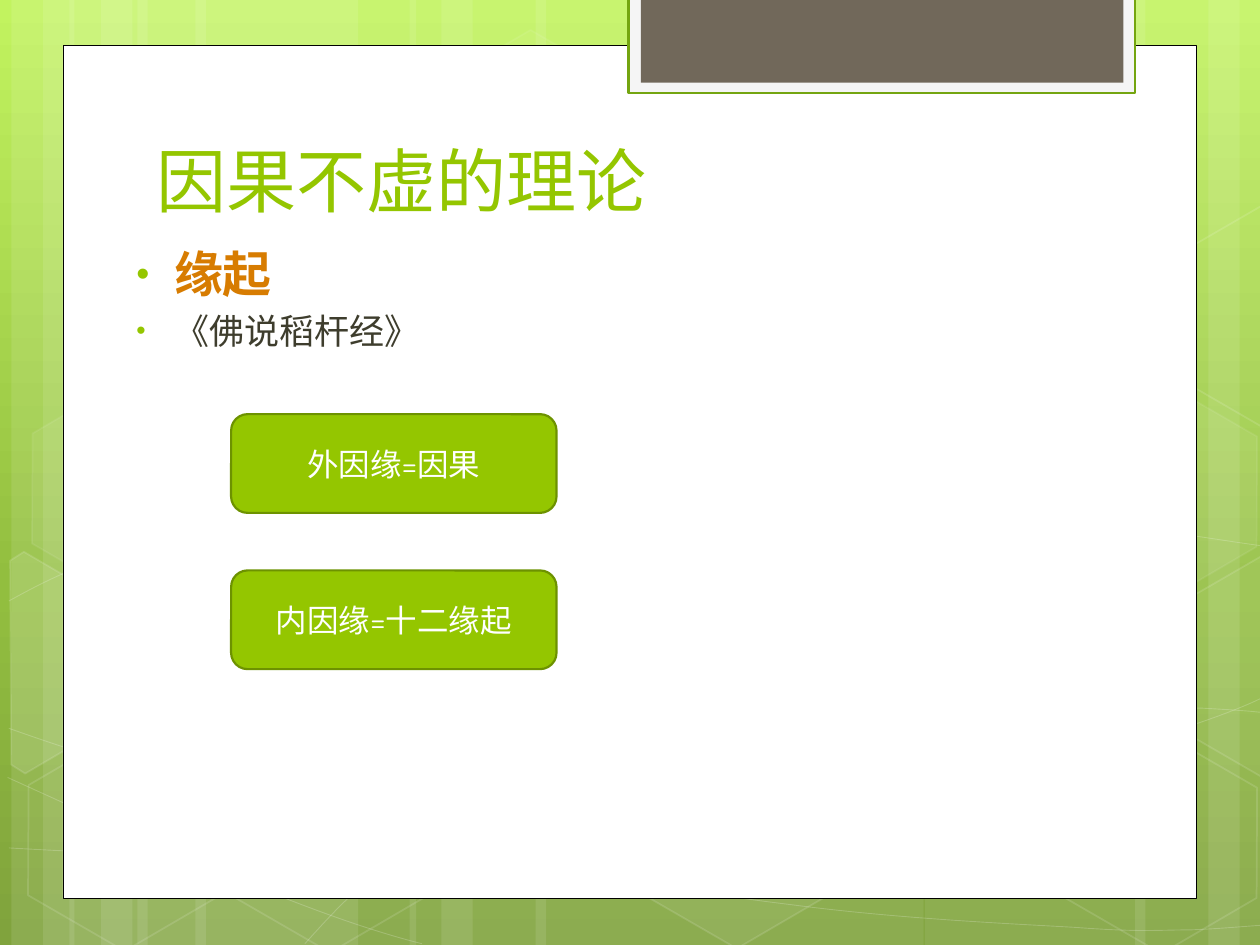
"""Build the slide on the theory of cause and effect."""
from copy import deepcopy

from lxml.etree import SubElement
from pptx import Presentation
from pptx.dml.color import RGBColor
from pptx.enum.shapes import MSO_SHAPE
from pptx.enum.text import MSO_ANCHOR, MSO_AUTO_SIZE, PP_ALIGN
from pptx.oxml.ns import qn
from pptx.util import Cm, Pt

COLORS = {
    "sky": "C2F35F", "meadow": "92BE3F", "moss": "80A33D",
    "white": "FFFFFF", "black": "000000", "lime": "94C600",
    "lime_edge": "6D9200", "tab": "F5F5F5", "tab_edge": "74A510",
    "tab_core": "71685A", "orange": "D77C01", "ink": "3E3D2D",
}


def paint(shape, fill=None, edge=None, width=1, fill_alpha=100, edge_alpha=100):
    """Set fill and line of a shape, with opacity in percent."""
    shape.shadow.inherit = False
    for part, color, alpha in (
        (shape.fill, fill, fill_alpha),
        (shape.line.fill, edge, edge_alpha),
    ):
        if color is None or alpha == 0:
            part.background()
            continue
        part.solid()
        part.fore_color.rgb = RGBColor.from_string(COLORS[color])
        if alpha < 100:
            holder = shape.element.spPr
            if part is not shape.fill:
                holder = holder.find(qn("a:ln"))
            value = holder.find(qn("a:solidFill")).find(qn("a:srgbClr"))
            SubElement(value, qn("a:alpha")).set("val", str(alpha * 1000))
    if edge:
        shape.line.width = Pt(width)


def style(paragraph, font_name, size, color, bold=False):
    """Format every run of a paragraph."""
    for run in paragraph.runs:
        run.font.name = font_name
        run.font.size = Pt(size)
        run.font.bold = bold
        run.font.color.rgb = RGBColor.from_string(COLORS[color])


prs = Presentation()
prs.slide_width, prs.slide_height = Cm(25.4), Cm(19.05)
slide = prs.slides.add_slide(prs.slide_layouts[5])
shapes = slide.shapes

backdrop = slide.background.fill
backdrop.gradient()
backdrop.gradient_angle = 270
stop_list = next(slide.element.iter(qn("a:gsLst")))
stop_list.append(deepcopy(stop_list[0]))
for stop, (color, position) in zip(
    backdrop.gradient_stops, (("sky", 0), ("meadow", 0.62), ("moss", 1))
):
    stop.color.rgb = RGBColor.from_string(COLORS[color])
    stop.position = position

for start, wide, mirrored in (
    (0.23, 4.45, False), (1.4, 4.45, False), (25.63, 4.45, True), (8.26, 7.82, False),
):
    for offset, width in ((2.54, wide), (0, 1.27), (0.64, 2.11)):
        left = start - offset - width if mirrored else start + offset
        stripe = shapes.add_shape(MSO_SHAPE.RECTANGLE, Cm(left), 0, Cm(width), prs.slide_height)
        stripe.rotation = 180 if mirrored else 0
        paint(stripe, "white", fill_alpha=10)

GRID = Cm(0.0254)
CURVES = [
    [(7, 673), (61, 676), (115, 679), (190, 678), (265, 677), (358, 675), (458, 665),
     (558, 655), (700, 636), (792, 617), (883, 598), (977, 568), (1007, 551)],
    [(7, 477), (36, 461), (65, 446), (121, 431), (178, 416), (259, 394), (347, 387),
     (436, 380), (544, 379), (654, 387), (764, 395), (947, 426), (1007, 434)],
    [(6, 617), (127, 672), (247, 727), (335, 749)],
    [(7, 578), (38, 589), (70, 600), (128, 616), (186, 631), (273, 656), (357, 673),
     (440, 690), (545, 708), (628, 718), (711, 729), (800, 733), (853, 736),
     (906, 740), (919, 738), (945, 738), (971, 737), (989, 735), (1007, 734)],
    [(242, 749), (260, 729), (278, 709), (302, 691), (326, 672), (360, 653), (388, 639),
     (416, 625), (433, 619), (469, 609), (506, 599), (573, 585), (608, 578),
     (644, 571), (649, 571), (680, 569), (711, 566), (760, 563), (794, 562),
     (829, 561), (886, 562), (886, 562), (886, 562), (953, 562), (953, 562),
     (971, 563), (988, 564), (997, 565), (1006, 566), (1003, 565), (1006, 566)],
]
for knots in CURVES:
    builder = shapes.build_freeform(*knots[0], scale=GRID)
    builder.add_line_segments(knots[1:], close=False)
    strand = builder.convert_to_shape()
    outline = next(strand.element.iter(qn("a:path")))
    sides = outline.findall(qn("a:lnTo"))
    for first in range(0, len(sides), 3):
        bend = SubElement(outline, qn("a:cubicBezTo"))
        for side in sides[first:first + 3]:
            bend.append(side[0])
            outline.remove(side)
    paint(strand, edge="white", width=0.5, edge_alpha=20)

for left, top, fill_alpha, edge_alpha in (
    (8.48, 0.91, 4, 8), (12.62, 14.96, 6, 12), (0.28, 15.01, 0, 12),
    (0.36, 7.92, 7, 8), (4.42, 15.04, 0, 12), (21.18, 15.06, 0, 12),
    (21.18, 7.98, 7, 8),
):
    hexagon = shapes.add_shape(MSO_SHAPE.HEXAGON, Cm(left), Cm(top), Cm(4.45), Cm(3.86))
    hexagon.adjustments[0] = 0.285
    hexagon.rotation = 30
    paint(hexagon, "white", "white", 1, fill_alpha, edge_alpha)

for fill_alpha, corners in (
    (10, [(8, 445), (19, 438), (96, 483), (95, 570), (20, 614), (9, 607)]),
    (4, [(926, 485), (1002, 441), (1009, 446), (1009, 613), (1002, 617), (926, 573)]),
    (0, [(926, 207), (1002, 163), (1010, 168), (1009, 335), (1002, 339), (926, 295)]),
):
    builder = shapes.build_freeform(*corners[0], scale=GRID)
    builder.add_line_segments(corners[1:], close=True)
    paint(builder.convert_to_shape(), "white", "white", 1, fill_alpha, 12)

for left, top, width, height, fill, edge, weight in (
    (1.27, 0.91, 22.86, 17.2, "white", "black", 0.5),
    (12.67, -0.05, 10.22, 1.93, "tab", "tab_edge", 1.25),
    (12.92, -0.05, 9.73, 1.72, "tab_core", None, 0),
):
    panel = shapes.add_shape(MSO_SHAPE.RECTANGLE, Cm(left), Cm(top), Cm(width), Cm(height))
    paint(panel, fill, edge, weight)

title = shapes.title
title.left, title.top, title.width, title.height = Cm(2.9), Cm(2.56), Cm(19.51), Cm(2.03)
title.element.getparent().append(title.element)
title.text_frame.text = "因果不虚的理论"
title.text_frame.auto_size = MSO_AUTO_SIZE.NONE
title.text_frame.vertical_anchor = MSO_ANCHOR.BOTTOM
title.text_frame.paragraphs[0].alignment = PP_ALIGN.LEFT
style(title.text_frame.paragraphs[0], "Quicksand", 40, "lime")

points = shapes.add_textbox(Cm(2.3), Cm(4.79), Cm(20.09), Cm(8.74)).text_frame
points.word_wrap = True
points.text = "缘起\n《佛说稻杆经》"
for point, size, color, bold in zip(
    points.paragraphs, (28, 20), ("orange", "ink"), (True, False)
):
    point.space_before = Pt(size * 0.2)
    style(point, "Arial", size, color, bold)
    layout = point._p.get_or_add_pPr()
    layout.set("marL", str(Cm(0.96)))
    layout.set("indent", str(-Cm(0.76)))
    SubElement(SubElement(layout, qn("a:buClr")), qn("a:srgbClr")).set("val", COLORS["lime"])
    SubElement(layout, qn("a:buSzPct")).set("val", "76000")
    SubElement(layout, qn("a:buFont")).set("typeface", "Arial")
    SubElement(layout, qn("a:buChar")).set("char", "•")

for row, cause in enumerate(("外因缘=因果", "内因缘=十二缘起")):
    card = shapes.add_shape(
        MSO_SHAPE.ROUNDED_RECTANGLE, Cm(4.66), Cm(8.35 + row * 3.15), Cm(6.56), Cm(1.99)
    )
    paint(card, "lime", "lime_edge", 1.25)
    card.text_frame.text = cause
    card.text_frame.vertical_anchor = MSO_ANCHOR.MIDDLE
    card.text_frame.paragraphs[0].alignment = PP_ALIGN.CENTER
    style(card.text_frame.paragraphs[0], "Quicksand", 18, "white")

prs.save("out.pptx")
